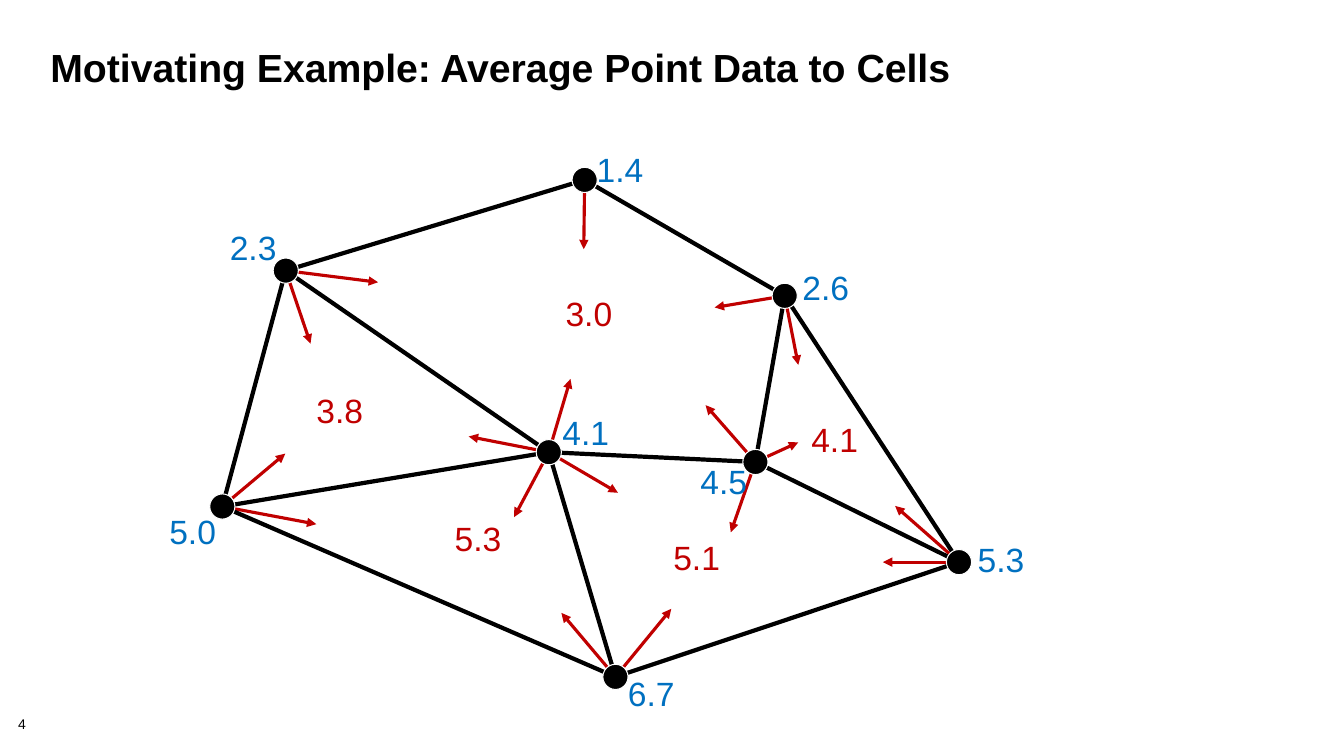
from pptx import Presentation
from pptx.dml.color import RGBColor
from pptx.enum import shapes, text
from pptx.oxml.ns import qn
from pptx.util import Pt
from lxml import etree

BLACK, WHITE, RED, BLUE = "000000", "FFFFFF", "C00000", "0070C0"

deck = Presentation()
deck.slide_width, deck.slide_height = Pt(960), Pt(540)
slide = deck.slides.add_slide(deck.slide_layouts[5])
parts = slide.shapes


def write(words, x, y, w, h, size=24, color=BLACK, bold=False, box=None,
          pad=(9.36, 7.2), gap=0.9, wrap=False,
          anchor=text.MSO_ANCHOR.MIDDLE, fit=text.MSO_AUTO_SIZE.NONE):
    box = box or parts.add_textbox(0, 0, 0, 0)
    box.left, box.top, box.width, box.height = Pt(x), Pt(y), Pt(w), Pt(h)
    frame = box.text_frame
    frame.text = words
    frame.word_wrap, frame.auto_size = wrap, fit
    frame.vertical_anchor = anchor
    frame.margin_left = frame.margin_right = Pt(pad[0])
    frame.margin_top = frame.margin_bottom = Pt(pad[1])
    para = frame.paragraphs[0]
    para.alignment = text.PP_ALIGN.LEFT
    para.line_spacing = gap
    font = para.runs[0].font
    font.name, font.size, font.bold = "Arial", Pt(size), bold
    font.color.rgb = RGBColor.from_string(color)


def draw(start, end, color, width, arrow=False):
    link = parts.add_connector(shapes.MSO_CONNECTOR.STRAIGHT,
                               Pt(start[0]), Pt(start[1]), Pt(end[0]), Pt(end[1]))
    link.line.color.rgb = RGBColor.from_string(color)
    link.line.width = Pt(width)
    if arrow:
        tip = etree.SubElement(link.line._get_or_add_ln(), qn("a:tailEnd"))
        tip.set("type", "triangle")
    etree.SubElement(link._element.spPr, qn("a:effectLst"))


# Title and page number
write("Motivating Example: Average Point Data to Cells", 28.8, 32.4, 895.7, 72,
      size=28, bold=True, box=parts.title, pad=(7.2, 3.6), gap=0.85, wrap=True,
      anchor=text.MSO_ANCHOR.TOP)
write("4", 13, 512.6, 40.3, 11.5, size=10, pad=(0, 0), wrap=True,
      anchor=text.MSO_ANCHOR.TOP)

# Mesh points: centre, value, label corner, arrow tips
points = {
    "top": ((417.6, 128.5), "1.4", (416.9, 102.2), [(417, 178)]),
    "east": ((685, 401.5), "5.3", (689, 380.9), [(630.7, 401.5), (639.4, 361.4)]),
    "mid": ((539.6, 330), "4.5", (491, 324.7),
            [(522, 380.2), (570.2, 316), (504, 289.4)]),
    "right": ((560.5, 211.3), "2.6", (563.8, 186.5), [(570.2, 260.6), (510.5, 219.6)]),
    "base": ((439.6, 483.5), "6.7", (439.2, 476.6), [(479.5, 434.9), (401, 437.8)]),
    "hub": ((392, 323), "4.1", (392.4, 290.2),
            [(367.2, 369.4), (441.4, 352), (334.8, 311.8), (407.5, 270.7)]),
    "west": ((158.8, 361.8), "5.0", (111.6, 360.7), [(226, 374.4), (203.8, 324)]),
    "left": ((204.1, 193.3), "2.3", (154.8, 157.7), [(221.8, 245.5), (270, 201.6)]),
}
edges = [("top", "right"), ("right", "mid"), ("hub", "mid"), ("west", "hub"),
         ("left", "hub"), ("left", "west"), ("left", "top"), ("base", "east"),
         ("mid", "east"), ("east", "right"), ("base", "hub"), ("west", "base")]

# Arrows from points into cells
for spot, value, corner, tips in points.values():
    for tip in tips:
        draw(spot, tip, RED, 2.25, arrow=True)

# Cell edges
for a, b in edges:
    draw(points[a][0], points[b][0], BLACK, 3)

# Point dots
SIZE = 18
for (x, y), value, corner, tips in points.values():
    dot = parts.add_shape(shapes.MSO_SHAPE.OVAL, Pt(x - SIZE / 2), Pt(y - SIZE / 2),
                          Pt(SIZE), Pt(SIZE))
    dot.shadow.inherit = False
    dot.fill.solid()
    dot.fill.fore_color.rgb = RGBColor.from_string(BLACK)
    dot.line.color.rgb = RGBColor.from_string(WHITE)
    dot.line.width = Pt(0.75)

# Point values in blue, cell averages in red
cells = [("3.0", (394.6, 205.2)), ("3.8", (216.7, 274.3)), ("5.3", (315.4, 365.8)),
         ("5.1", (471.6, 379.4)), ("4.1", (570.2, 295.2))]
labels = [(value, corner, BLUE) for spot, value, corner, tips in points.values()]
labels += [(value, corner, RED) for value, corner in cells]
for value, (x, y), color in labels:
    write(value, x, y, 52.6, 41, color=color, fit=text.MSO_AUTO_SIZE.SHAPE_TO_FIT_TEXT)

deck.save("out.pptx")
